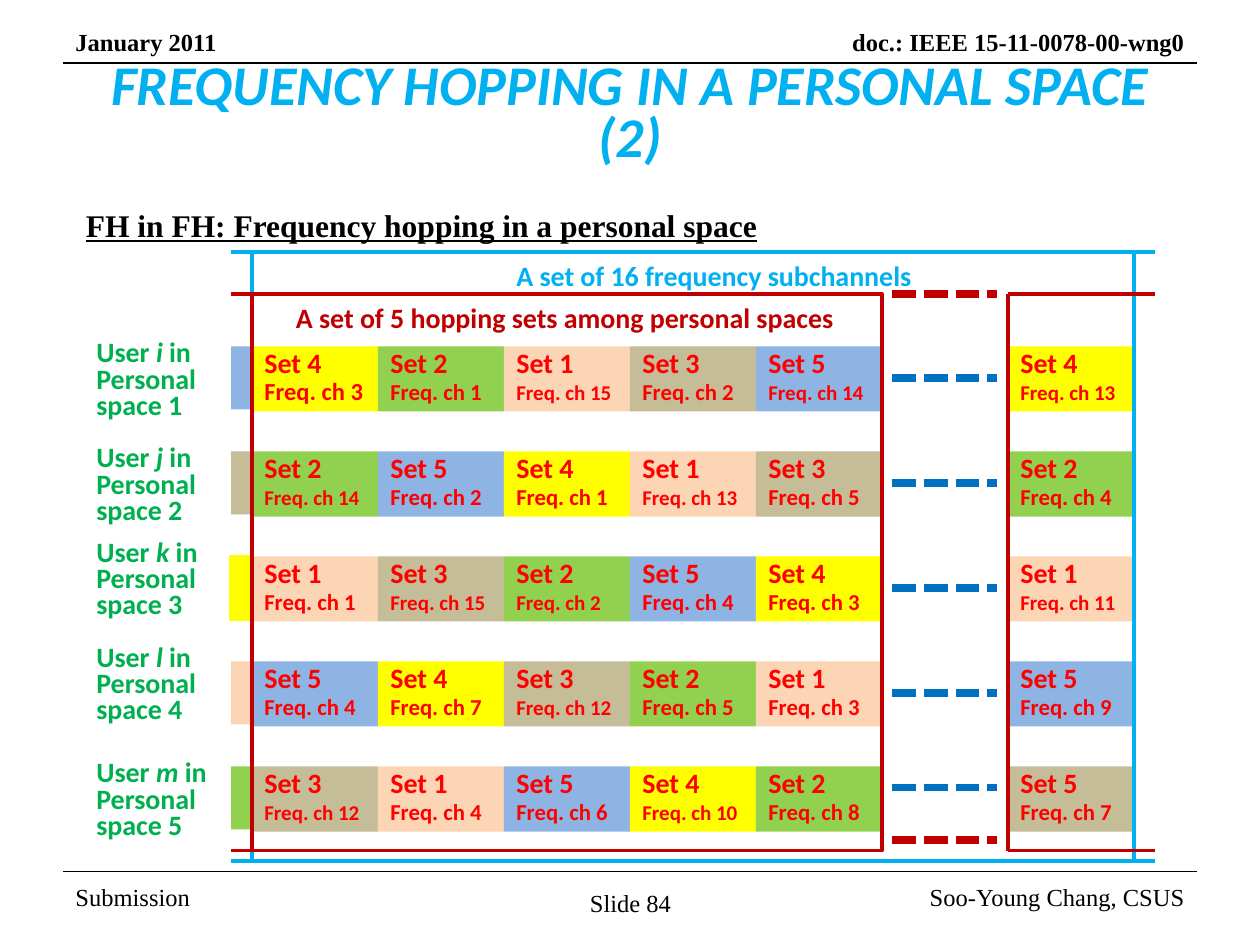
from lxml import etree
from pptx import Presentation
from pptx import util as u
from pptx.dml.color import RGBColor
from pptx.enum import dml, shapes, text as tx
from pptx.oxml.ns import qn

HUE = dict(ink="000000", sky="00B0F0", leaf="00B050", red="FF0000",
           wine="C00000", blue="0070C0")
SETS = {1: "FCD5B5", 2: "92D050", 3: "C4BD97", 4: "FFFF00", 5: "8EB4E3"}
SERIF, SANS = "Times New Roman", "Calibri"
UNIT = 1 / 12
COL, ROW, STUB = 12, 10, 2
COLS = [0, 1, 2, 3, 4, 6]
USERS = [
    ("i", 5, [(4, 3), (2, 1), (1, 15), (3, 2), (5, 14), (4, 13)]),
    ("j", 3, [(2, 14), (5, 2), (4, 1), (1, 13), (3, 5), (2, 4)]),
    ("k", 4, [(1, 1), (3, 15), (2, 2), (5, 4), (4, 3), (1, 11)]),
    ("l", 1, [(5, 4), (4, 7), (3, 12), (2, 5), (1, 3), (5, 9)]),
    ("m", 2, [(3, 12), (1, 4), (5, 6), (4, 10), (2, 8), (5, 7)]),
]
LABELS = [7, 17, 26, 36, 47]
DOTS = [11, 21, 31, 41, 50]
SIZES = {(0, 0): 14, (2, 2): 12}
TINTS = {(4, 5): 3}


def grid(*nums):
    return [u.Inches(n * UNIT) for n in nums]


def rgb(hue):
    return RGBColor.from_string(HUE.get(hue, hue))


def text(page, box, runs, size=14, font=SERIF, hue="ink", bold=False,
         under=False, side="LEFT", anchor="TOP", lead=None, wrap=True,
         grow=True, fill=None):
    if fill:
        item = block(page, box, fill)
    else:
        item = page.shapes.add_textbox(*grid(*box))
    frame = item.text_frame
    frame.word_wrap = wrap
    frame.auto_size = (tx.MSO_AUTO_SIZE.SHAPE_TO_FIT_TEXT if grow
                       else tx.MSO_AUTO_SIZE.NONE)
    frame.vertical_anchor = tx.MSO_ANCHOR[anchor]
    para = frame.paragraphs[0]
    para.alignment = tx.PP_ALIGN[side]
    if lead:
        para.line_spacing = u.Pt(lead)
    for words, look in [(runs, {})] if isinstance(runs, str) else runs:
        if look.get("fresh"):
            para.add_line_break()
        run = para.add_run()
        run.text = words
        face = run.font
        face.name, face.size = font, u.Pt(look.get("size", size))
        face.bold, face.italic = bold, look.get("slant", False)
        face.underline = under
        face.color.rgb = rgb(hue)


def block(page, box, fill=None, edge=None):
    item = page.shapes.add_shape(shapes.MSO_SHAPE.RECTANGLE, *grid(*box))
    item.shadow.inherit = False
    if fill:
        item.fill.solid()
        item.fill.fore_color.rgb = rgb(fill)
    else:
        item.fill.background()
    if edge:
        item.line.color.rgb = rgb(edge)
        item.line.width = u.Pt(2)
    else:
        item.line.fill.background()
    return item


def line(page, ends, hue, width=2.25, dots=False):
    item = page.shapes.add_connector(shapes.MSO_CONNECTOR.STRAIGHT, *grid(*ends))
    item.line.color.rgb = rgb(hue)
    item.line.width = u.Pt(width)
    if dots:
        item.line.dash_style = dml.MSO_LINE.SQUARE_DOT
    props = item._element.find(qn("p:spPr"))
    etree.SubElement(props, qn("a:effectLst"))


def header(page, x, y, wide):
    line(page, (x, y + 4, x + wide, y + 4), "ink", 0.75)
    text(page, (x, y, 17, 4), "January 2011", bold=True)
    text(page, (x + wide - 43, y, 43, 4), "doc.: IEEE 15-11-0078-00-wng0",
         bold=True, side="RIGHT")


def footer(page, x, y, wide):
    line(page, (x, y, x + wide, y), "ink", 0.75)
    text(page, (x, y, 28, 4.8), "Submission", anchor="MIDDLE", grow=False)
    text(page, (x + wide - 28, y, 28, 4.8), "Soo-Young Chang, CSUS",
         side="RIGHT", anchor="MIDDLE", grow=False)
    text(page, (x + 49, y + 1, 10.2, 4), "Slide 84", wrap=False)


def titles(page, x, y, wide):
    text(page, (x, y, wide, 15), [("FREQUENCY HOPPING IN A PERSONAL SPACE (2)",
         {"slant": True})], size=32, font=SANS, hue="sky", bold=True,
         side="CENTER", anchor="MIDDLE", lead=30, grow=False)
    text(page, (x + 1, y + 15.4, 76, 4.8),
         "FH in FH: Frequency hopping in a personal space",
         size=18, bold=True, under=True)


def users(page, x, y):
    bold = dict(size=16, font=SANS, bold=True, lead=15)
    for row, (name, stub, hops) in enumerate(USERS):
        top = y + 9 + row * ROW
        text(page, (x - 16, y + 1 + LABELS[row], 13, 8.8),
             [("User ", {}), (name, {"slant": True}),
              (f" in Personal space {row + 1}", {})], hue="leaf", **bold)
        for place, (group, chan) in enumerate(hops):
            size = SIZES.get((row, place), 12 if chan > 9 else 13)
            tint = SETS[TINTS.get((row, place), group)]
            text(page, (x + COLS[place] * COL, top, COL, 6.2),
                 [(f"Set {group}", {}),
                  (f"Freq. ch {chan}", {"size": size, "fresh": True})],
                 hue="red", fill=tint, **bold)
        block(page, (x - STUB, top, STUB, 6), SETS[stub],
              SETS[stub] if stub == 4 else None)
        dots(page, x, y + 1 + DOTS[row], "blue")


def dots(page, x, y, hue):
    line(page, (x + 5 * COL + 1, y, x + 6 * COL - 1, y), hue, 4.5, True)


def frames(page, x, y, wide, high):
    block(page, (x, y, wide, high), edge="sky")
    block(page, (x, y + 4, 5 * COL, high - 5), edge="wine")
    for words, left, top, span, hue in [
            ("A set of 16 frequency subchannels", 24, 0, 40.6, "sky"),
            ("A set of 5 hopping sets among personal spaces", 3, 4, 54.4, "wine")]:
        text(page, (x + left, y + top, span, 4.4), words, size=16, font=SANS,
             hue=hue, bold=True, wrap=False)
    last, end = x + 6 * COL, x + wide + STUB
    line(page, (last, y + 4, last, y + high - 1), "wine")
    for level in (y + 4, y + high - 1):
        line(page, (last, level, end, level), "wine")
        line(page, (x - STUB, level, x, level), "wine")
    for level in (y + 4, y + high - 2):
        dots(page, x, level, "wine")
    for level in (y, y + high):
        line(page, (x - STUB, level, x + 14, level), "sky")
        line(page, (end - 16, level, end, level), "sky")


def main():
    deck = Presentation()
    deck.slide_width, deck.slide_height = u.Inches(10), u.Inches(7.5)
    page = deck.slides.add_slide(deck.slide_layouts[6])
    footer(page, 6, 83, 108)
    header(page, 6, 2, 108)
    titles(page, 6, 3.6, 108)
    users(page, 24, 24)
    frames(page, 24, 24, 84, 58)
    deck.save("out.pptx")


if __name__ == "__main__":
    main()
